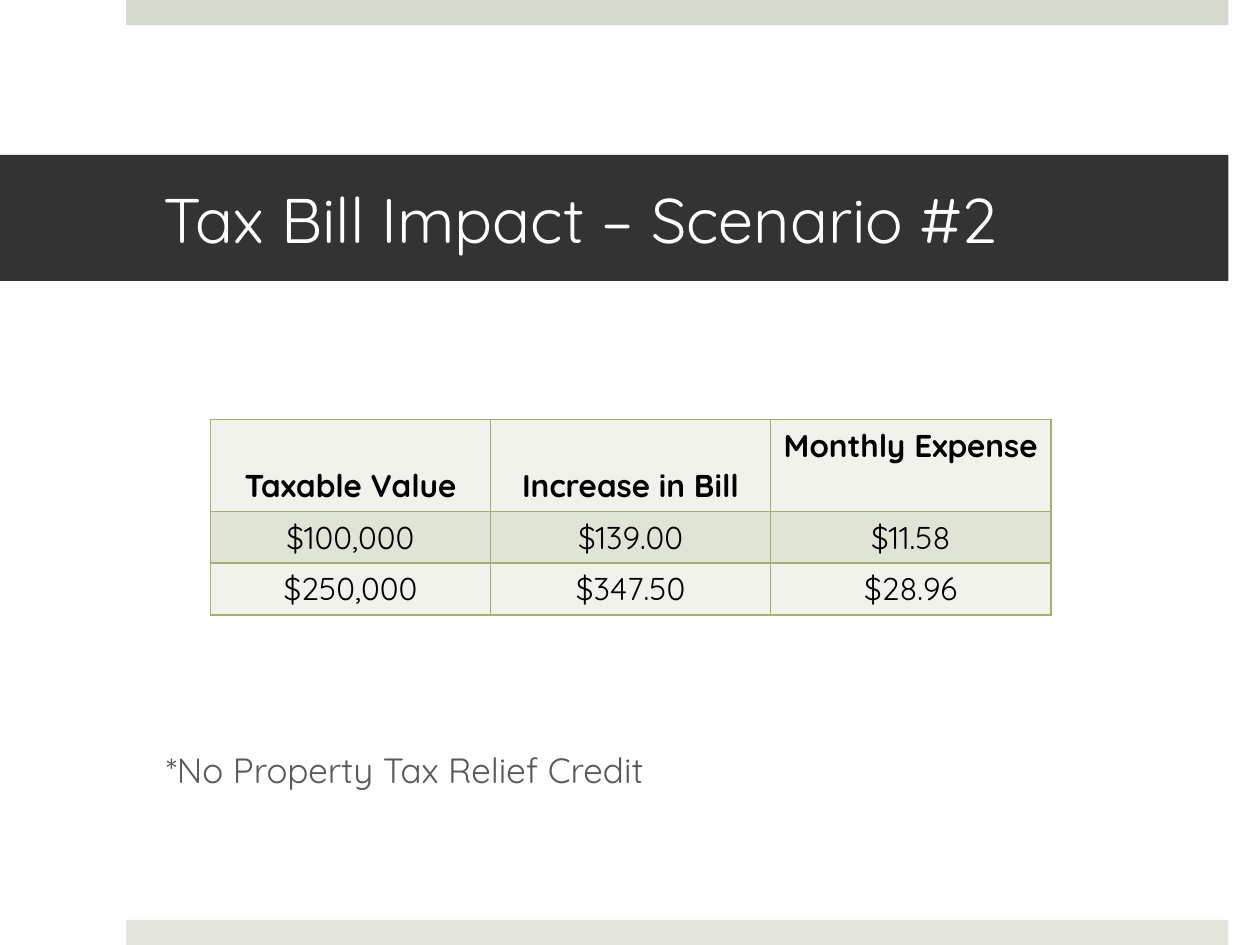
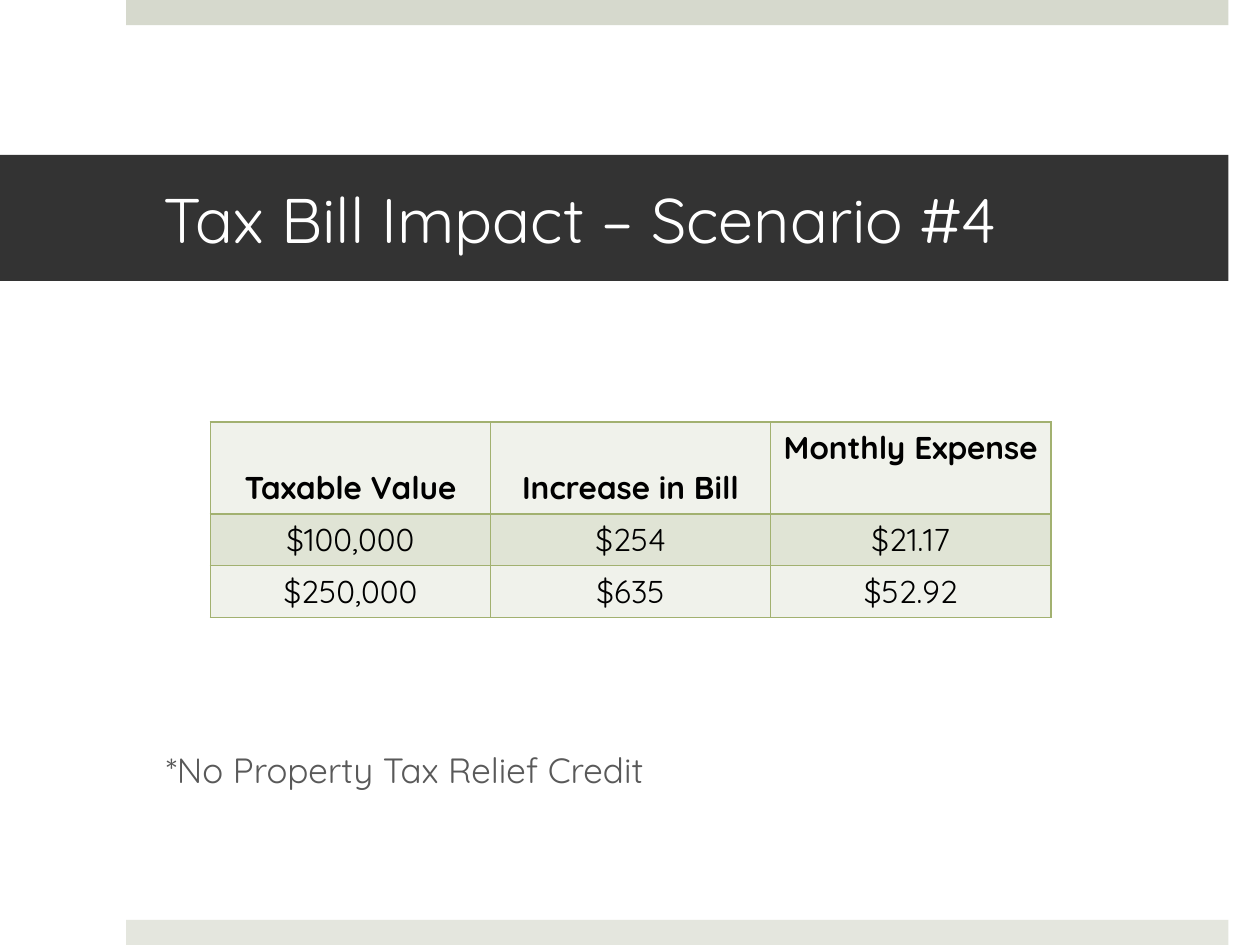
from dataclasses import dataclass

from lxml.etree import SubElement
from pptx import Presentation
from pptx.dml.color import RGBColor
from pptx.enum.shapes import MSO_SHAPE
from pptx.enum.text import MSO_ANCHOR, PP_ALIGN
from pptx.oxml.ns import qn
from pptx.util import Inches, Pt

FONT = "Quicksand"
WHITE, BLACK, GRAY = "FFFFFF", "000000", "595959"
BORDER_COLOR = "A2B170"
ROW_FILLS = ("F0F2EB", "E0E4D5")
TABLE_LEFT, TABLE_WIDTH = 1.67, 6.67
HEADER_HEIGHT, ROW_HEIGHT = 0.73, 0.41
HEADERS = ("Taxable Value", "Increase in Bill", "Monthly Expense")
HEADER_ANCHORS = (MSO_ANCHOR.BOTTOM, MSO_ANCHOR.BOTTOM, MSO_ANCHOR.TOP)
NOTE = "*No Property Tax Relief Credit"
TITLE_FRAME = {
    "word_wrap": True,
    "vertical_anchor": MSO_ANCHOR.MIDDLE,
    "margin_left": Inches(1.3),
    "margin_right": Inches(0.3),
    "margin_top": Inches(0.05),
    "margin_bottom": Inches(0.05),
}


@dataclass(frozen=True)
class Band:
    """A filled rectangle, measured in inches."""

    left: float
    top: float
    width: float
    height: float
    color: str


@dataclass(frozen=True)
class Scenario:
    """The figures of one tax bill slide."""

    title: str
    table_top: float
    rows: tuple[tuple[str, str, str], ...]


EDGE_BANDS = (
    Band(1, 0, 8.75, 0.2, "D6D9CD"),
    Band(1, 7.3, 8.75, 0.2, "E4E6DE"),
)
TITLE_BAND = Band(0, 1.23, 9.75, 1, "333333")
SCENARIOS = (
    Scenario(
        "Tax Bill Impact – Scenario #2",
        3.33,
        (("$100,000", "$139.00", "$11.58"), ("$250,000", "$347.50", "$28.96")),
    ),
    Scenario(
        "Tax Bill Impact – Scenario #4",
        3.35,
        (("$100,000", "$254", "$21.17"), ("$250,000", "$635", "$52.92")),
    ),
)


def set_values(target, values: dict) -> None:
    """Set each named attribute of the target."""
    for name, value in values.items():
        setattr(target, name, value)


def paint(fill, color: str) -> None:
    """Make a fill solid in the given colour."""
    fill.solid()
    fill.fore_color.rgb = RGBColor.from_string(color)


def write(frame, text: str, size: int, color: str, bold=False, align=PP_ALIGN.LEFT) -> None:
    """Write one formatted paragraph into a text frame."""
    paragraph = frame.paragraphs[0]
    paragraph.alignment = align
    run = paragraph.add_run()
    run.text = text
    set_values(run.font, {"name": FONT, "size": Pt(size), "bold": bold})
    run.font.color.rgb = RGBColor.from_string(color)


def add_band(slide, band: Band):
    """Draw a band and return its shape."""
    lengths = (band.left, band.top, band.width, band.height)
    shape = slide.shapes.add_shape(MSO_SHAPE.RECTANGLE, *map(Inches, lengths))
    shape.shadow.inherit = False
    paint(shape.fill, band.color)
    shape.line.fill.background()
    return shape


def add_borders(cell) -> None:
    """Give a cell a one-point line on each side."""
    properties = cell._tc.get_or_add_tcPr()
    for side in ("a:lnL", "a:lnR", "a:lnT", "a:lnB"):
        line = SubElement(properties, qn(side), w=str(Pt(1)))
        fill = SubElement(line, qn("a:solidFill"))
        SubElement(fill, qn("a:srgbClr"), val=BORDER_COLOR)


def add_bill_table(slide, scenario: Scenario) -> None:
    """Draw the table of bill increases."""
    rows = (HEADERS, *scenario.rows)
    heights = [HEADER_HEIGHT] + [ROW_HEIGHT] * len(scenario.rows)
    table = slide.shapes.add_table(
        len(rows), len(HEADERS), Inches(TABLE_LEFT), Inches(scenario.table_top),
        Inches(TABLE_WIDTH), Inches(sum(heights)),
    ).table
    set_values(table, {"first_row": False, "horz_banding": False})
    for column in table.columns:
        column.width = Inches(TABLE_WIDTH / len(HEADERS))
    for row_index, (texts, height) in enumerate(zip(rows, heights)):
        table.rows[row_index].height = Inches(height)
        for column_index, text in enumerate(texts):
            cell = table.cell(row_index, column_index)
            is_header = row_index == 0
            add_borders(cell)
            paint(cell.fill, ROW_FILLS[row_index % 2])
            if is_header:
                cell.vertical_anchor = HEADER_ANCHORS[column_index]
            write(cell.text_frame, text, 18, BLACK, is_header, PP_ALIGN.CENTER)


def add_note(slide) -> None:
    """Write the note below the table."""
    box = slide.shapes.add_textbox(Inches(1.22), Inches(5.89), Inches(8.32), Inches(0.45))
    box.text_frame.word_wrap = True
    write(box.text_frame, NOTE, 20, GRAY)


def add_scenario_slide(presentation, scenario: Scenario) -> None:
    """Build one scenario slide."""
    slide = presentation.slides.add_slide(presentation.slide_layouts[6])
    paint(slide.background.fill, WHITE)
    for band in EDGE_BANDS:
        add_band(slide, band)
    title = add_band(slide, TITLE_BAND)
    set_values(title.text_frame, TITLE_FRAME)
    write(title.text_frame, scenario.title, 36, WHITE)
    add_note(slide)
    add_bill_table(slide, scenario)


def main() -> None:
    """Build and save the presentation."""
    presentation = Presentation()
    set_values(presentation, {"slide_width": Inches(10), "slide_height": Inches(7.5)})
    for scenario in SCENARIOS:
        add_scenario_slide(presentation, scenario)
    presentation.save("out.pptx")


if __name__ == "__main__":
    main()
